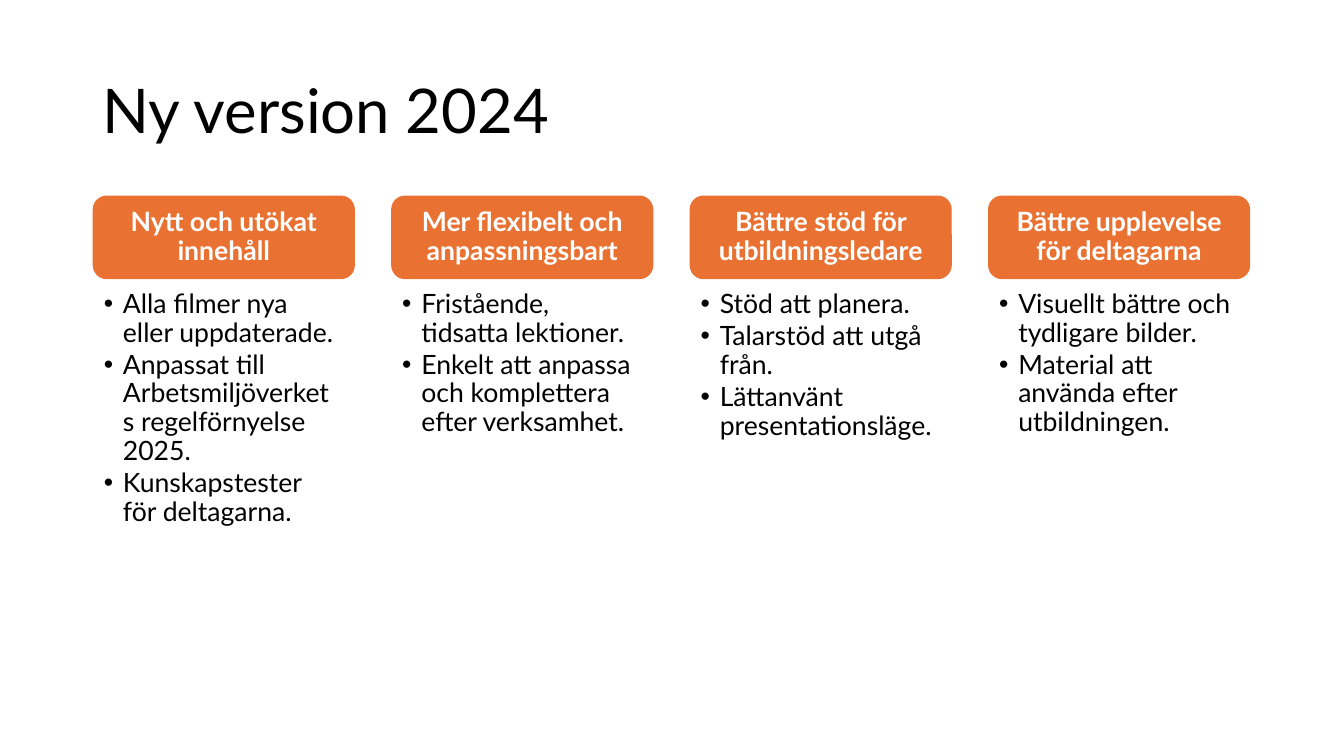
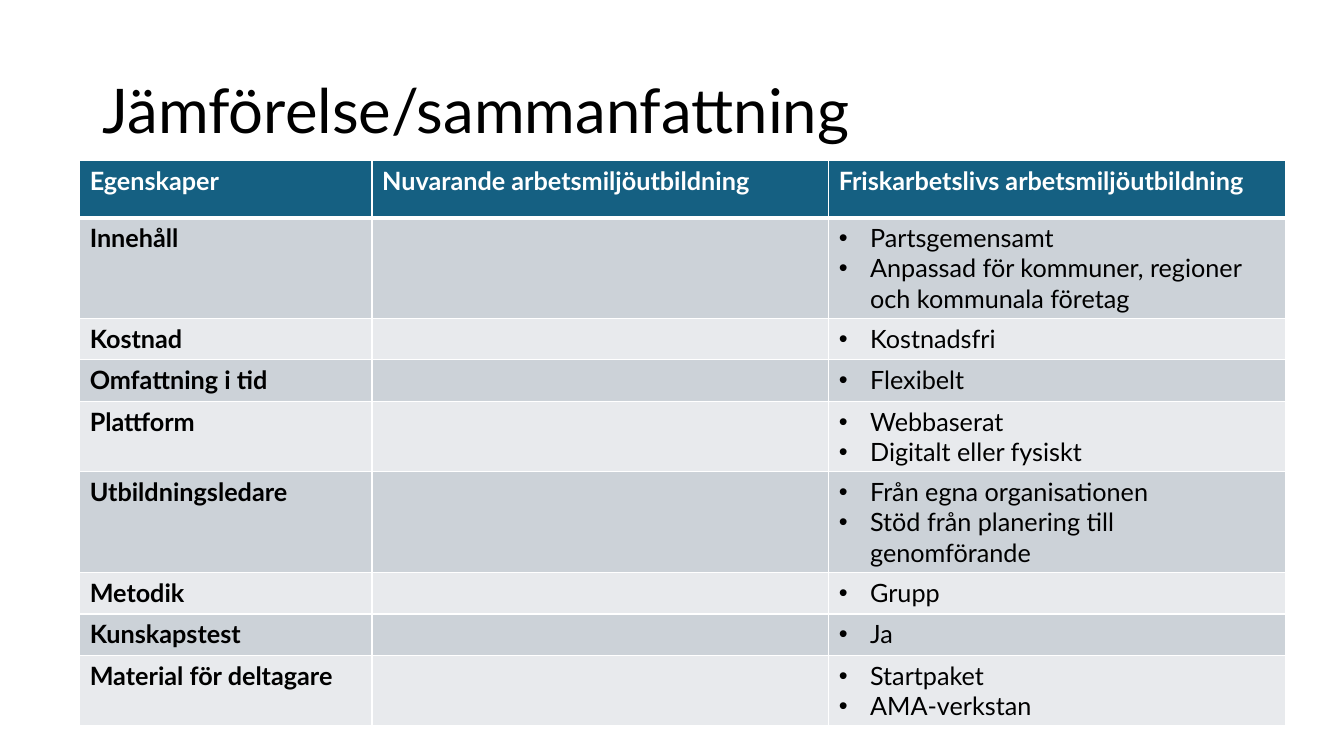
from dataclasses import dataclass

from lxml.etree import SubElement
from pptx import Presentation
from pptx.dml.color import RGBColor
from pptx.enum.shapes import MSO_SHAPE
from pptx.enum.text import MSO_ANCHOR, PP_ALIGN
from pptx.oxml.ns import qn
from pptx.util import Inches, Pt

FONT = "Lato"
COLORS = {
    "text": "000000",
    "light": "FFFFFF",
    "card": "E97132",
    "head": "156082",
    "odd": "CCD2D8",
    "even": "E8EAED",
}
LEFT, WIDTH = 0.92, 11.5
CARD_W, CARD_H, CARD_TOP, STEP = 2.6, 0.83, 1.94, 2.96
COLS = (2.9, 4.53, 4.53)
HEAD_H = 0.57
HEIGHTS = {1: 0.41, 2: 0.69, 3: 1.0}  # row height by number of text lines


@dataclass
class Card:
    head: str
    points: list[str]


@dataclass
class Row:
    name: str
    points: list[str]
    lines: int = 1


CARDS = [
    Card("Nytt och utökat innehåll", [
        "Alla filmer nya eller uppdaterade.",
        "Anpassat till Arbetsmiljöverkets regelförnyelse 2025.",
        "Kunskapstester för deltagarna.",
    ]),
    Card("Mer flexibelt och anpassningsbart", [
        "Fristående, tidsatta lektioner.",
        "Enkelt att anpassa och komplettera efter verksamhet.",
    ]),
    Card("Bättre stöd för utbildningsledare", [
        "Stöd att planera.",
        "Talarstöd att utgå från.",
        "Lättanvänt presentationsläge.",
    ]),
    Card("Bättre upplevelse för deltagarna", [
        "Visuellt bättre och tydligare bilder.",
        "Material att använda efter utbildningen.",
    ]),
]
HEADS = ["Egenskaper", "Nuvarande arbetsmiljöutbildning",
         "Friskarbetslivs arbetsmiljöutbildning"]
ROWS = [
    Row("Innehåll", [
        "Partsgemensamt",
        "Anpassad för kommuner, regioner och kommunala företag",
    ], 3),
    Row("Kostnad", ["Kostnadsfri"]),
    Row("Omfattning i tid", ["Flexibelt"]),
    Row("Plattform", ["Webbaserat", "Digitalt eller fysiskt"], 2),
    Row("Utbildningsledare", [
        "Från egna organisationen",
        "Stöd från planering till genomförande",
    ], 3),
    Row("Metodik", ["Grupp"]),
    Row("Kunskapstest", ["Ja"]),
    Row("Material för deltagare", ["Startpaket", "AMA-verkstan"], 2),
]


def paint(item, color: str) -> None:
    item.fill.solid()
    item.fill.fore_color.rgb = RGBColor.from_string(COLORS[color])


def write(frame, texts: list[str], size: float, color: str = "text",
          bold: bool = False, indent: float = 0, align=PP_ALIGN.LEFT,
          spacing: float = 1, after: float = 0) -> None:
    """Write one paragraph per text; an indent gives it a bullet."""
    for i, text in enumerate(texts):
        para = frame.add_paragraph() if i else frame.paragraphs[0]
        para.alignment = align
        para.line_spacing = spacing
        para.space_after = Pt(after)
        if indent:
            props = para._p.get_or_add_pPr()
            props.set("marL", str(Inches(indent)))
            props.set("indent", str(-Inches(indent)))
            SubElement(props, qn("a:buFont"), typeface="Arial")
            SubElement(props, qn("a:buChar"), char="•")
        run = para.add_run()
        run.text = text
        run.font.name = FONT
        run.font.size = Pt(size)
        run.font.bold = bold
        run.font.color.rgb = RGBColor.from_string(COLORS[color])


def inset(frame, left: float, top: float, right: float, bottom: float) -> None:
    frame.word_wrap = True
    frame.margin_left, frame.margin_top = Inches(left), Inches(top)
    frame.margin_right, frame.margin_bottom = Inches(right), Inches(bottom)


def add_slide(deck, title: str):
    slide = deck.slides.add_slide(deck.slide_layouts[6])
    box = slide.shapes.add_textbox(
        Inches(LEFT), Inches(0.4), Inches(WIDTH), Inches(1.45))
    box.text_frame.word_wrap = True
    box.text_frame.vertical_anchor = MSO_ANCHOR.MIDDLE
    write(box.text_frame, [title], 44, spacing=0.9)
    return slide


def add_card(slide, card: Card, left: float) -> None:
    head = slide.shapes.add_shape(
        MSO_SHAPE.ROUNDED_RECTANGLE, Inches(left), Inches(CARD_TOP),
        Inches(CARD_W), Inches(CARD_H))
    head.shadow.inherit = False
    paint(head, "card")
    head.line.fill.background()
    head.text_frame.vertical_anchor = MSO_ANCHOR.MIDDLE
    inset(head.text_frame, 0.15, 0.08, 0.15, 0.08)
    write(head.text_frame, [card.head], 19, "light", True,
          align=PP_ALIGN.CENTER, spacing=0.9)
    body = slide.shapes.add_textbox(
        Inches(left), Inches(CARD_TOP + CARD_H), Inches(CARD_W), Inches(3.08))
    inset(body.text_frame, 0.11, 0.11, 0.15, 0.17)
    write(body.text_frame, card.points, 19, indent=0.19, spacing=0.9, after=2.5)


def edge(cell, side: str, width: float) -> None:
    """Draw a white border on one side of a cell."""
    line = SubElement(cell._tc.get_or_add_tcPr(), qn(f"a:ln{side}"),
                      w=str(Pt(width)))
    fill = SubElement(line, qn("a:solidFill"))
    SubElement(fill, qn("a:srgbClr"), val=COLORS["light"])


def add_grid(slide) -> None:
    heights = [HEAD_H] + [HEIGHTS[row.lines] for row in ROWS]
    grid = slide.shapes.add_table(
        len(heights), len(COLS), Inches(0.79), Inches(1.59),
        Inches(sum(COLS)), Inches(sum(heights))).table
    for col, width in zip(grid.columns, COLS):
        col.width = Inches(width)
    for i, height in enumerate(heights):
        grid.rows[i].height = Inches(height)
        for cell in grid.rows[i].cells:
            for side in "LRTB":
                thick = (i, side) in ((0, "B"), (1, "T"))
                edge(cell, side, 3 if thick else 1)
            paint(cell, "head" if i == 0 else "odd" if i % 2 else "even")
    for i, head in enumerate(HEADS):
        write(grid.cell(0, i).text_frame, [head], 18, "light", True)
    for i, row in enumerate(ROWS, 1):
        write(grid.cell(i, 0).text_frame, [row.name], 18, bold=True)
        write(grid.cell(i, 2).text_frame, row.points, 18, indent=0.31)


def main() -> None:
    deck = Presentation()
    deck.slide_width, deck.slide_height = Inches(13.33), Inches(7.5)
    news = add_slide(deck, "Ny version 2024")
    for i, card in enumerate(CARDS):
        add_card(news, card, LEFT + i * STEP)
    add_grid(add_slide(deck, "Jämförelse/sammanfattning"))
    deck.save("out.pptx")


if __name__ == "__main__":
    main()
